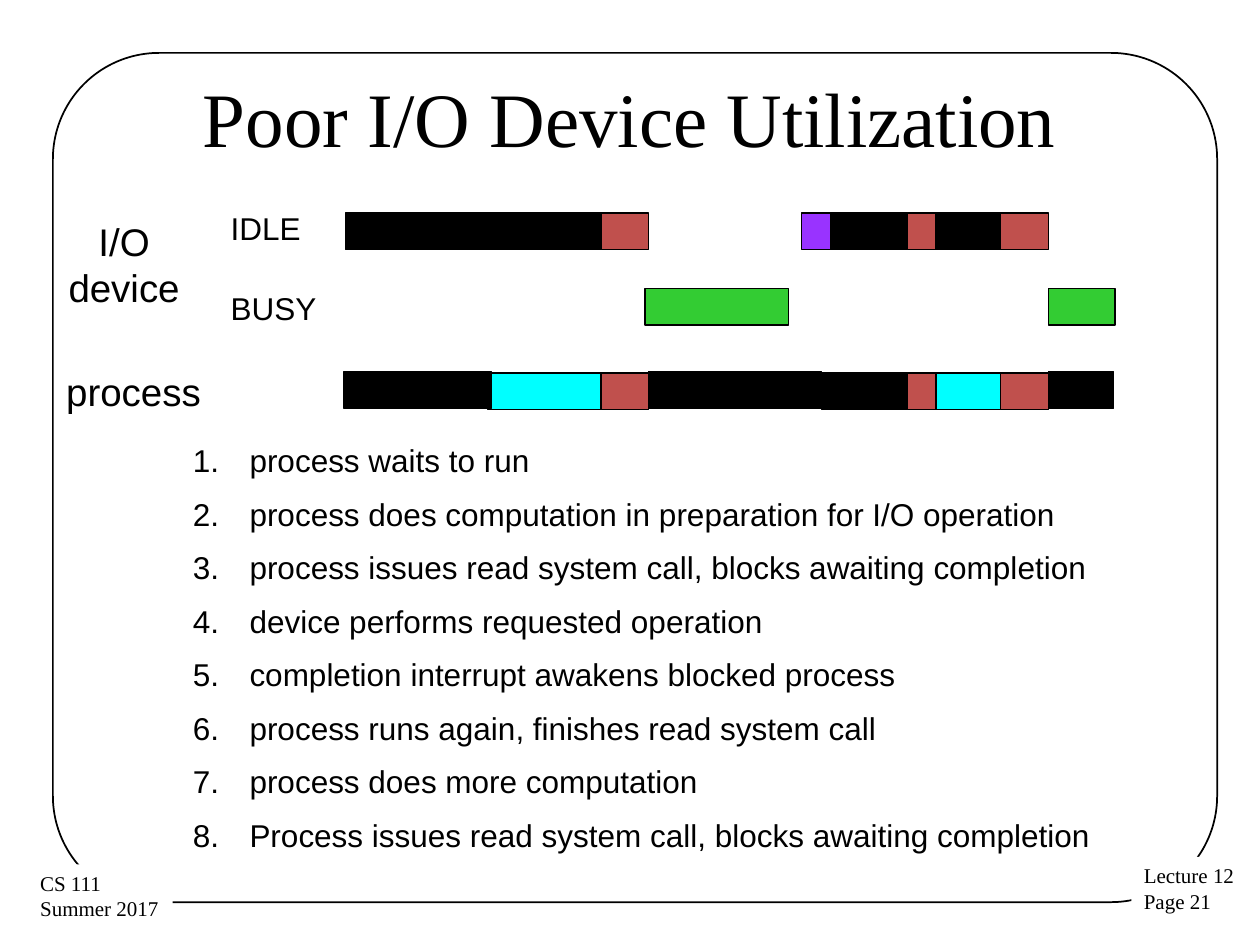
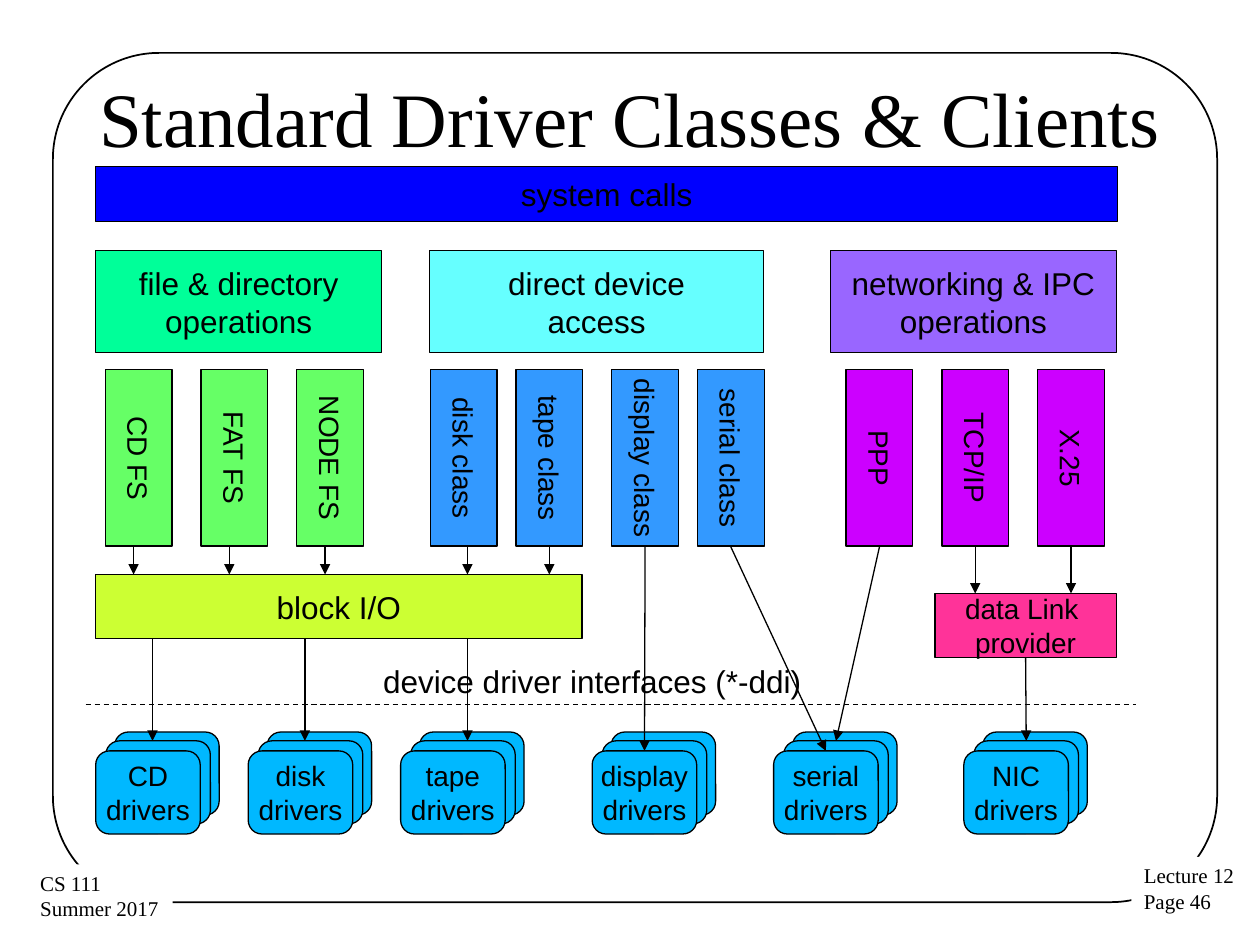
from pptx import Presentation
from pptx.dml.color import RGBColor as RGB
from pptx.enum.dml import MSO_LINE_DASH_STYLE as Dash
from pptx.enum.shapes import MSO_CONNECTOR as Conn, MSO_SHAPE as Geo
from pptx.enum.text import MSO_ANCHOR as Anchor, MSO_AUTO_SIZE as Auto, PP_ALIGN as Align
from pptx.oxml.ns import qn
from pptx.util import Pt
from lxml.etree import SubElement as Sub

SCALE = 9144  # EMU per px, 100 px to the inch
TOP, BOTTOM, RIGHT = 0, 2, 3  # connection sites

HUES = {
    "black": "000000", "white": "FFFFFF", "red": "C0504D", "green": "33CC33",
    "violet": "9933FF", "cyan": "00FFFF", "blue": "0000FF", "mint": "00FF99",
    "aqua": "66FFFF", "lilac": "9966FF", "lime": "66FF66", "sky": "3399FF",
    "purple": "CC00FF", "yellow": "CCFF33", "pink": "FF3399", "card": "00B8FF",
}
FONTS = {
    "title": {"name": "Times New Roman", "size": Pt(44)},
    "corner": {"name": "Times New Roman", "size": Pt(12)},
    "label": {"name": "Arial", "size": Pt(22)},
    "text": {"name": "Arial", "size": Pt(18)},
    "small": {"name": "Arial", "size": Pt(16)},
}

# Device and process timelines: top, then (left, width, colour) of each bar
LANES = [
    (169, [(387, 90, "black"), (274, 117, "black"), (477, 38, "red"),
           (636, 23, "violet"), (742, 53, "black"), (659, 61, "black"),
           (720, 23, "red"), (794, 38, "red")]),
    (229, [(512, 114, "green"), (832, 53, "green")]),
    (296, [(387, 90, "cyan"), (477, 38, "red"), (742, 53, "cyan"),
           (652, 68, "black"), (720, 23, "red"), (794, 38, "red")]),
    (295, [(273, 117, "black"), (515, 114, "black"), (629, 23, "black"),
           (832, 52, "black")]),
]
STEPS = [
    "process waits to run",
    "process does computation in preparation for I/O operation",
    "process issues read system call, blocks awaiting completion",
    "device performs requested operation",
    "completion interrupt awakens blocked process",
    "process runs again, finishes read system call",
    "process does more computation",
    "Process issues read system call, blocks awaiting completion",
]

# Upright boxes: name and centre
CLASSES = {
    "lime": [("CD FS", 110), ("FAT FS", 186), ("NODE FS", 262)],
    "sky": [("disk class", 368), ("tape class", 436),
            ("display class", 512), ("serial class", 580)],
    "purple": [("PPP", 698), ("TCP/IP", 774), ("X.25", 850)],
}
DRIVERS = {"CD": 76, "disk": 197, "tape": 318, "display": 470,
           "serial": 614, "NIC": 765}


def px(*nums):
    return [round(num * SCALE) for num in nums]


def color(name):
    return RGB.from_string(HUES[name])


def write(frame, lines, style, align=Align.LEFT):
    """Fill a text frame, one paragraph a line."""
    for i, line in enumerate(lines):
        para = frame.add_paragraph() if i else frame.paragraphs[0]
        para.alignment = align
        run = para.add_run()
        run.text = line
        run.font.color.rgb = color("black")
        for key, value in FONTS[style].items():
            setattr(run.font, key, value)


def inset(frame, side=9, edge=4):
    frame.margin_left = frame.margin_right = px(side)[0]
    frame.margin_top = frame.margin_bottom = px(edge)[0]


def box(slide, at, fill=None, lines=(), style="text", geo=Geo.RECTANGLE,
        width=0.75, align=Align.CENTER):
    shape = slide.shapes.add_shape(geo, *px(*at))
    shape.shadow.inherit = False
    if fill:
        shape.fill.solid()
        shape.fill.fore_color.rgb = color(fill)
    else:
        shape.fill.background()
    if width:
        shape.line.color.rgb = color("black")
        shape.line.width = Pt(width)
    else:
        shape.line.fill.background()
    if lines:
        frame = shape.text_frame
        frame.word_wrap = False
        frame.vertical_anchor = Anchor.MIDDLE
        inset(frame)
        write(frame, lines, style, align)
    return shape


def label(slide, at, text, style="text", align=Align.LEFT):
    frame = slide.shapes.add_textbox(*px(*at)).text_frame
    frame.word_wrap = True
    inset(frame)
    write(frame, [text], style, align)


def corner(slide, at, lines):
    frame = box(slide, at, "white", lines, "corner", width=0,
                align=Align.LEFT).text_frame
    frame.vertical_anchor = Anchor.TOP
    frame.auto_size = Auto.SHAPE_TO_FIT_TEXT
    inset(frame, 10, 5)


def line(slide, start, end, dash=False, tail=None, head=None):
    """Draw a line; tail and head are (shape, site) pairs to join."""
    link = slide.shapes.add_connector(Conn.STRAIGHT, *px(*start, *end))
    if tail:
        link.begin_connect(*tail)
        # A turned box needs its visible foot as the start
        link.begin_x, link.begin_y = px(*start)
    if head:
        link.end_connect(*head)
    link.line.color.rgb = color("black")
    link.line.width = Pt(0.75)
    if dash:
        link.line.dash_style = Dash.DASH
    else:
        Sub(link.line._get_or_add_ln(), qn("a:tailEnd"), type="triangle")
    Sub(link._element.spPr, qn("a:effectLst"))


def numbers(shape, at, lines):
    """Turn the body placeholder into a numbered list."""
    shape.left, shape.top, shape.width, shape.height = px(*at)
    frame = shape.text_frame
    frame.auto_size = Auto.NONE
    frame.vertical_anchor = Anchor.TOP
    inset(frame)
    write(frame, lines, "text")
    for i, para in enumerate(frame.paragraphs):
        para.space_before = Pt(9 if i else 0)
        props = para._p.get_or_add_pPr()
        props.set("marL", str(45 * SCALE))
        props.set("indent", str(-45 * SCALE))
        Sub(props, qn("a:buFont"), typeface="Arial")
        Sub(props, qn("a:buAutoNum"), type="arabicPeriod")


def page(deck, layout, title, number):
    """Add a slide with the shared frame, corners and title."""
    slide = deck.slides.add_slide(deck.slide_layouts[layout])
    frame = box(slide, (42, 42, 924, 674), geo=Geo.ROUNDED_RECTANGLE, width=1)
    frame.adjustments[0] = 0.125
    corner(slide, (898, 680, 93, 51), ["Lecture 12", f"Page {number}"])
    corner(slide, (22, 686, 115, 51), ["CS 111", "Summer 2017"])
    head = slide.shapes.title
    head.left, head.top, head.width, head.height = px(50, 30, 900, 125)
    head.text_frame.auto_size = Auto.NONE
    head.text_frame.vertical_anchor = Anchor.MIDDLE
    write(head.text_frame, [title], "title", Align.CENTER)
    return slide


def stack(slide, name, left):
    """Draw three cards, back to front; return the middle and front ones."""
    cards = []
    for shift in (15, 8, 0):
        lines = () if shift else (name, "drivers")
        cards.append(box(slide, (left + shift, 596 - shift, 83, 66), "card",
                         lines, "small", Geo.ROUNDED_RECTANGLE))
    return cards[1:]


def usage(deck):
    slide = page(deck, 1, "Poor I/O Device Utilization", 21)
    label(slide, (174, 162, 91, 39), "IDLE")
    label(slide, (174, 225, 91, 39), "BUSY")
    label(slide, (38, 169, 121, 83), "I/O device", "label", Align.CENTER)
    label(slide, (38, 288, 136, 46), "process", "label", Align.CENTER)
    for top, bars in LANES:
        for left, width, fill in bars:
            box(slide, (left, top, width, 29), fill)
    numbers(slide.placeholders[1], (144, 346, 742, 357), STEPS)


def drivers(deck):
    slide = page(deck, 5, "Standard Driver Classes & Clients", 46)

    # Calls and operations
    box(slide, (76, 132, 811, 44), "blue", ["system calls"])
    box(slide, (76, 199, 227, 81), "mint", ["file & directory", "operations"])
    box(slide, (341, 199, 265, 81), "aqua", ["direct device", "access"])
    box(slide, (659, 199, 227, 81), "lilac", ["networking & IPC", "operations"])

    # Classes, turned on their side
    units = {}
    for fill, items in CLASSES.items():
        for name, mid in items:
            unit = box(slide, (mid - 70, 337, 140, 53), fill, [name], "small")
            unit.rotation = 90
            units[name] = unit, mid

    # Shared layers and driver stacks
    box(slide, (76, 456, 386, 51), "yellow", ["block I/O"])
    data = box(slide, (742, 471, 144, 51), "pink", ["data Link ", "provider"],
               "small")
    cards = {name: stack(slide, name, left) for name, left in DRIVERS.items()}
    line(slide, (68, 559), (902, 559), dash=True)
    label(slide, (295, 521, 364, 39), "device driver interfaces (*-ddi)")

    # Arrows from classes to the layers below
    for mid in (106, 182, 258, 371):
        line(slide, (mid, 434), (mid, 456))
    for name, top in (("tape class", 456), ("TCP/IP", 471), ("X.25", 471)):
        unit, mid = units[name]
        line(slide, (mid, 434), (mid, top), tail=(unit, RIGHT))

    # Arrows to the drivers
    for mid in (121, 242, 371):
        line(slide, (mid, 507), (mid, 588))
    for name, (middle, front), end in (
            ("display class", cards["display"], (511, 596)),
            ("serial class", cards["serial"], (655, 596)),
            ("PPP", cards["serial"], (663, 588))):
        unit, mid = units[name]
        card = middle if name == "PPP" else front
        line(slide, (mid, 434), end, tail=(unit, RIGHT), head=(card, TOP))
    line(slide, (814, 522), (814, 588), tail=(data, BOTTOM),
         head=(cards["NIC"][0], TOP))


def main():
    deck = Presentation()
    deck.slide_width, deck.slide_height = px(1000, 750)
    usage(deck)
    drivers(deck)
    deck.save("out.pptx")


if __name__ == "__main__":
    main()
